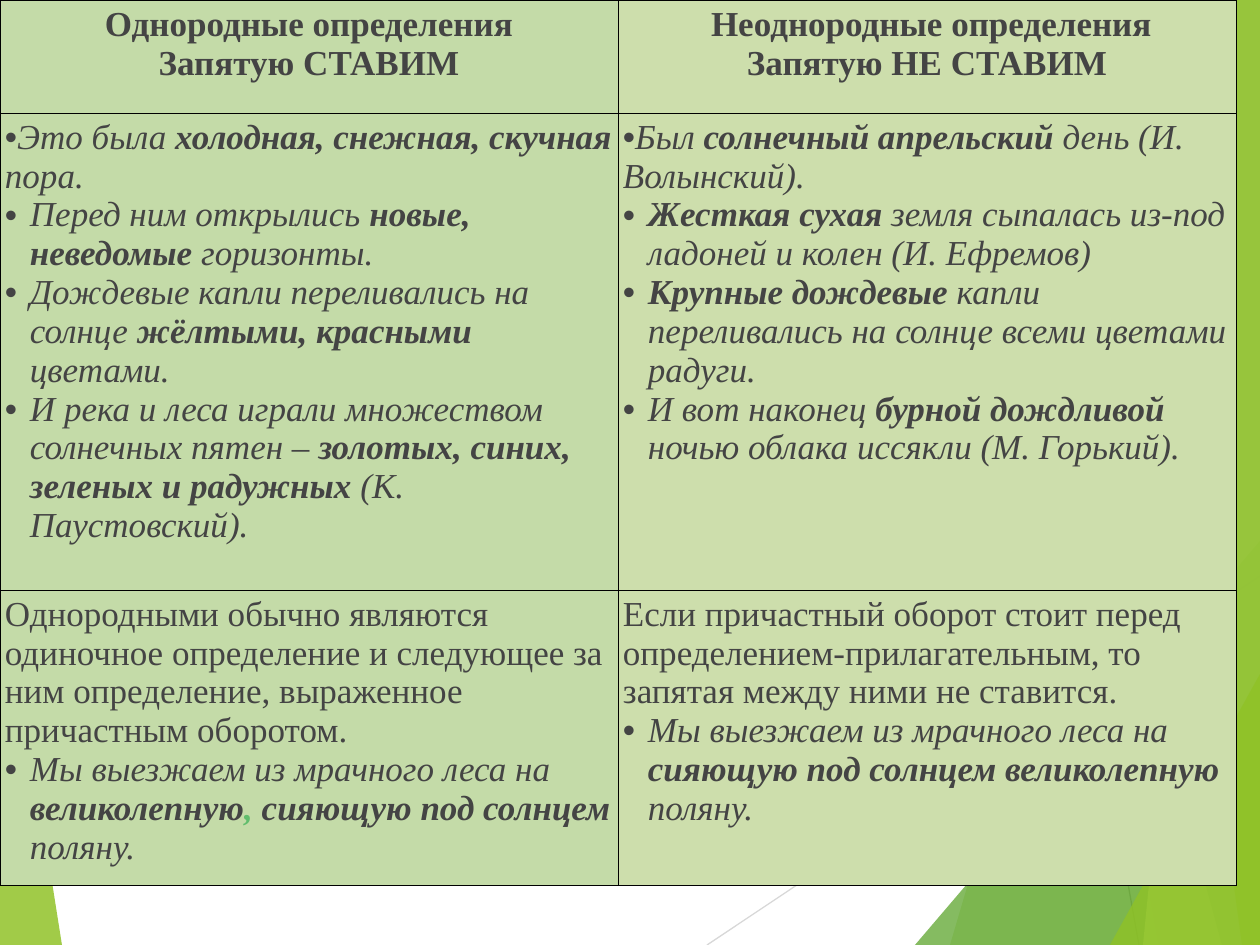
from lxml import etree
from pptx import Presentation
from pptx.dml.color import RGBColor
from pptx.enum.shapes import MSO_CONNECTOR
from pptx.enum.text import PP_ALIGN
from pptx.oxml.ns import qn
from pptx.util import Pt

STRAIGHT = MSO_CONNECTOR.STRAIGHT
CENTER = PP_ALIGN.CENTER
LEFT = PP_ALIGN.LEFT
SCALE = 914400 / 126
WIDTH, HEIGHT = 1260, 945

FORMATS = {
    "plain": {"bold": False, "italic": False},
    "bold": {"bold": True, "italic": False},
    "italic": {"bold": False, "italic": True},
    "strong": {"bold": True, "italic": True},
    "mark": {"bold": True, "italic": True},
}
COLORS = {"mark": "61BD6D"}

LEFT_FACET = ([(0, 553), (62, 945), (0, 945)], "90C226", 84)
RAYS = [
    ((707, 945), (1260, 576), "D8D8D8"),
    ((970, 0), (1139, 945), "BFBFBF"),
]
RIGHT_FACETS = [
    ([(1228, 0), (950, 945), (1260, 945), (1260, 0)], "90C226", 29),
    ([(993, 0), (1158, 945), (1260, 945), (1260, 0)], "90C226", 19),
    ([(915, 945), (1260, 541), (1260, 945)], "54A021", 71),
    ([(966, 0), (1222, 945), (1260, 945), (1260, 0)], "3F7818", 69),
    ([(1236, 0), (1143, 945), (1260, 945), (1260, 0)], "BFE472", 69),
    ([(1113, 0), (1242, 945), (1260, 945), (1260, 0)], "90C226", 64),
    ([(1110, 945), (1260, 674), (1260, 945)], "90C226", 79),
]

HEADERS = [
    [("head", [("Однородные определения", "bold")]),
     ("head", [("Запятую СТАВИМ", "bold")])],
    [("head", [(" ", "plain"), ("Неоднородные определения", "bold")]),
     ("head", [("Запятую НЕ СТАВИМ", "bold")])],
]
EXAMPLES = [
    [("small", [("Это была ", "italic"), ("холодная, снежная, скучная", "strong"),
                (" пора.", "italic")]),
     ("item", [("Перед ним открылись", "italic"), (" новые, неведомые", "strong"),
               (" горизонты.", "italic")]),
     ("item", [("Дождевые капли переливались на солнце ", "italic"),
               ("жёлтыми, красными", "strong"), (" цветами.", "italic")]),
     ("item", [("И река и леса играли множеством солнечных пятен – ", "italic"),
               ("золотых, синих, зеленых и радужных", "strong"),
               (" (К. Паустовский).", "italic")])],
    [("flush", [("Был ", "italic"), ("солнечный апрельский", "strong"),
                (" день (И. Волынский).", "italic")]),
     ("item", [("Жесткая сухая", "strong"),
               (" земля сыпалась из-под ладоней и колен (И. Ефремов)", "italic")]),
     ("item", [("Крупные дождевые", "strong"),
               (" капли переливались на солнце всеми цветами радуги.", "italic")]),
     ("item", [("И вот наконец ", "italic"), ("бурной дождливой", "strong"),
               (" ночью облака иссякли (М. Горький).", "italic")])],
]
RULES = [
    [("text", [("Однородными обычно являются одиночное определение и следующее за ним "
                "определение, выраженное причастным оборотом.", "plain")]),
     ("item", [("Мы выезжаем из мрачного леса на ", "italic"),
               ("великолепную", "strong"), (",", "mark"),
               (" сияющую под солнцем", "strong"), (" поляну.", "italic")])],
    [("text", [("Если причастный оборот стоит перед определением-прилагательным, "
                "то запятая между ними не ставится.", "plain")]),
     ("item", [("Мы выезжаем из мрачного леса на ", "italic"),
               ("сияющую под солнцем великолепную", "strong"),
               (" поляну.", "italic")])],
]


def px(n):
    return round(n * SCALE)


def rgb(color):
    return RGBColor.from_string(color)


class Deck:
    """Holds the text style and the slide being drawn."""

    font, size, ink = "Times New Roman", 20, "444444"
    inset, indent, bullet_font = 5, 25, "Arial"
    border, border_width = "000000", 0.5

    def __init__(self, slide):
        self.s = slide

    def facet(self, points, color, opacity):
        fb = self.s.shapes.build_freeform(*points[0], scale=SCALE)
        fb.add_line_segments(points[1:], close=True)
        sp = fb.convert_to_shape()
        sp.shadow.inherit = False
        sp.fill.solid()
        sp.fill.fore_color.rgb = rgb(color)
        sp.line.fill.background()
        clr = sp._element.spPr.find(qn("a:solidFill"))[0]
        etree.SubElement(clr, qn("a:alpha"), val=str(opacity * 1000))

    def line(self, start, end, color):
        cx = self.s.shapes.add_connector(STRAIGHT, *map(px, start + end))
        cx.line.color.rgb = rgb(color)
        cx.line.width = Pt(0.75)
        etree.SubElement(cx._element.spPr, qn("a:effectLst"))

    def table(self, box, widths, heights, rows, fills):
        tbl = self.s.shapes.add_table(len(rows), len(widths), *map(px, box)).table
        for col, w in zip(tbl.columns, widths):
            col.width = px(w)
        for row, h, contents in zip(tbl.rows, heights, rows):
            row.height = px(h)
            for cell, paragraphs, fill in zip(row.cells, contents, fills):
                self.cell(cell, paragraphs, fill)

    def cell(self, cell, paragraphs, fill):
        for side in ("left", "top", "right", "bottom"):
            setattr(cell, f"margin_{side}", px(self.inset))
        tcPr = cell._tc.get_or_add_tcPr()
        for tag in ("a:lnL", "a:lnR", "a:lnT", "a:lnB"):
            ln = etree.SubElement(tcPr, qn(tag), w=str(Pt(self.border_width)))
            paint = etree.SubElement(ln, qn("a:solidFill"))
            etree.SubElement(paint, qn("a:srgbClr"), val=self.border)
        cell.fill.solid()
        cell.fill.fore_color.rgb = rgb(fill)
        tf = cell.text_frame
        for i, (kind, runs) in enumerate(paragraphs):
            p = tf.add_paragraph() if i else tf.paragraphs[0]
            self.paragraph(p, kind, runs)

    def paragraph(self, p, kind, runs):
        p.alignment = CENTER if kind == "head" else LEFT
        if kind in ("small", "flush", "item"):
            self.bullet(p, kind)
        for text, style in runs:
            r = p.add_run()
            r.text = text
            values = {"name": self.font, "size": Pt(self.size), **FORMATS[style]}
            for name, value in values.items():
                setattr(r.font, name, value)
            r.font.color.rgb = rgb(COLORS.get(style, self.ink))

    def bullet(self, p, kind):
        pPr = p._p.get_or_add_pPr()
        indent = px(self.indent) if kind == "item" else 0
        pPr.set("marL", str(indent))
        pPr.set("indent", str(-indent))
        if kind == "small":
            etree.SubElement(pPr, qn("a:buSzPts"), val="1200")
        etree.SubElement(pPr, qn("a:buFont"), typeface=self.bullet_font)
        etree.SubElement(pPr, qn("a:buChar"), char="•")


def main():
    prs = Presentation()
    prs.slide_width, prs.slide_height = px(WIDTH), px(HEIGHT)
    deck = Deck(prs.slides.add_slide(prs.slide_layouts[6]))
    deck.facet(*LEFT_FACET)
    for ray in RAYS:
        deck.line(*ray)
    for facet in RIGHT_FACETS:
        deck.facet(*facet)
    deck.table((0, 0, 1236, 886), [618, 618], [113, 477, 296],
               [HEADERS, EXAMPLES, RULES], ["C4DBA8", "CDDEAC"])
    prs.save("out.pptx")


if __name__ == "__main__":
    main()
